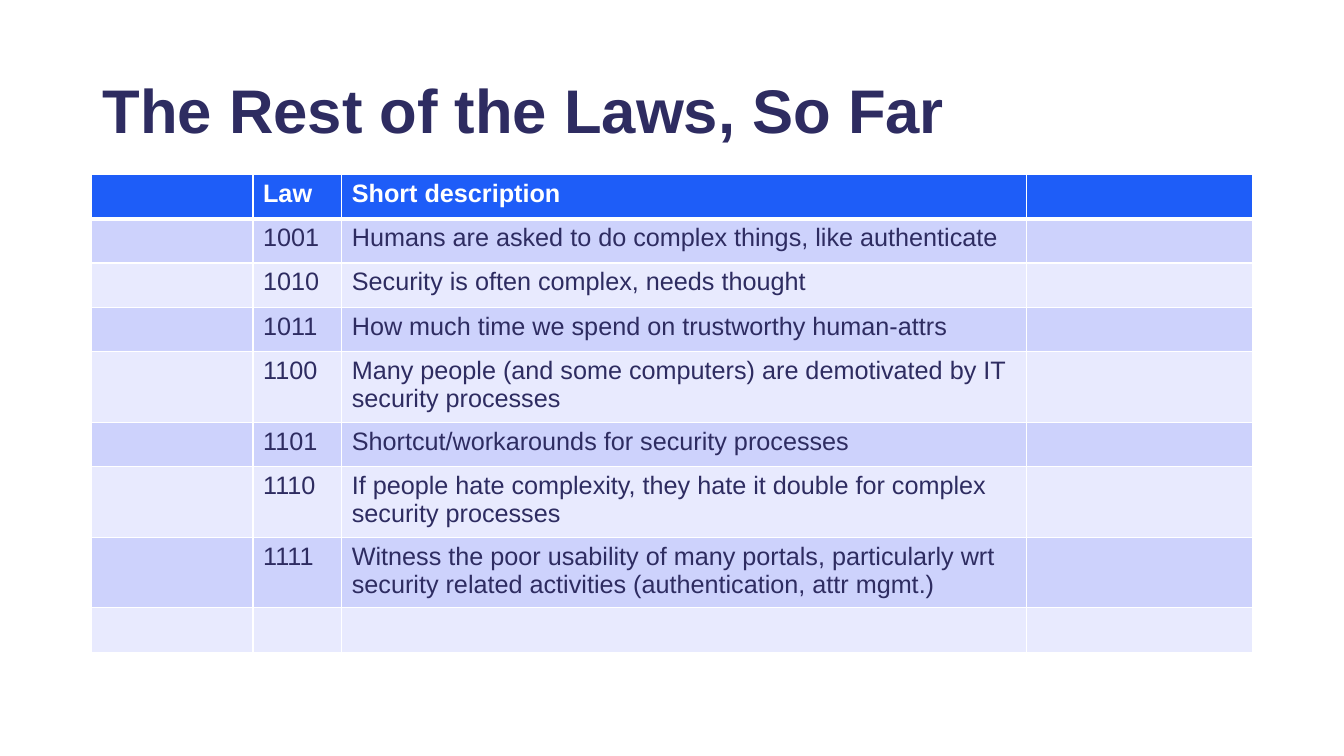
from pptx import Presentation
from pptx.dml.color import RGBColor
from pptx.enum.text import MSO_ANCHOR
from pptx.oxml import parse_xml
from pptx.oxml.ns import nsdecls
from pptx.util import Inches, Pt

# Content
TITLE = "The Rest of the Laws, So Far"
HEADER = ("Law", "Short description")
LAWS = [
    ("1001", "Humans are asked to do complex things, like authenticate"),
    ("1010", "Security is often complex, needs thought"),
    ("1011", "How much time we spend on trustworthy human-attrs"),
    ("1100", "Many people (and some computers) are demotivated by IT security processes"),
    ("1101", "Shortcut/workarounds for security processes"),
    ("1110", "If people hate complexity, they hate it double for complex security processes"),
    ("1111", "Witness the poor usability of many portals, particularly wrt "
             "security related activities (authentication, attr mgmt.)"),
    ("", ""),
]
COLORS = {"ink": "2E2C61", "white": "FFFFFF", "header": "1E5DF8",
          "odd": "CDD2FC", "even": "E8EAFE"}
FONT = "Arial"
COLUMN_WIDTHS = (1.6, 0.88, 6.79, 2.24)
LINE_HEIGHT, TWO_LINE_HEIGHT = 0.44, 0.66
LINE_CAPACITY = 60  # characters that fit on one line of the description


def style(paragraph, size, color, bold):
    font = paragraph.font
    font.name, font.size, font.bold = FONT, Pt(size), bold
    font.color.rgb = RGBColor.from_string(COLORS[color])


def add_borders(cell, bottom_width, top_width):
    widths = {"lnL": 1, "lnR": 1, "lnT": top_width, "lnB": bottom_width}
    properties = cell._tc.get_or_add_tcPr()
    for position, (side, width) in enumerate(widths.items()):
        properties.insert(position, parse_xml(
            f'<a:{side} {nsdecls("a")} w="{Pt(width)}"><a:solidFill>'
            f'<a:srgbClr val="{COLORS["white"]}"/></a:solidFill></a:{side}>'))


prs = Presentation()
prs.slide_width, prs.slide_height = Inches(13.33), Inches(7.5)
slide = prs.slides.add_slide(prs.slide_layouts[6])

# Title
title = slide.shapes.add_textbox(
    Inches(0.92), Inches(0.4), Inches(11.5), Inches(1.45)).text_frame
title.word_wrap = True
title.vertical_anchor = MSO_ANCHOR.MIDDLE
title.text = TITLE
title.paragraphs[0].line_spacing = 0.9
style(title.paragraphs[0], 44, "ink", True)

# Table of laws, with an empty column on either side
rows = [HEADER] + LAWS
heights = [TWO_LINE_HEIGHT if len(description) > LINE_CAPACITY else LINE_HEIGHT
           for _, description in rows]
laws = slide.shapes.add_table(
    len(rows), len(COLUMN_WIDTHS), Inches(0.91), Inches(1.73),
    Inches(sum(COLUMN_WIDTHS)), Inches(sum(heights))).table
for column, width in zip(laws.columns, COLUMN_WIDTHS):
    column.width = Inches(width)

for r, (law, description) in enumerate(rows):
    laws.rows[r].height = Inches(heights[r])
    is_header = r == 0
    band = "header" if is_header else "odd" if r % 2 else "even"
    for c, text in enumerate(("", law, description, "")):
        cell = laws.cell(r, c)
        cell.text = text
        cell.fill.solid()
        cell.fill.fore_color.rgb = RGBColor.from_string(COLORS[band])
        style(cell.text_frame.paragraphs[0], 18,
              "white" if is_header else "ink", is_header)
        add_borders(cell, 3 if is_header else 1, 3 if r == 1 else 1)

prs.save("out.pptx")
